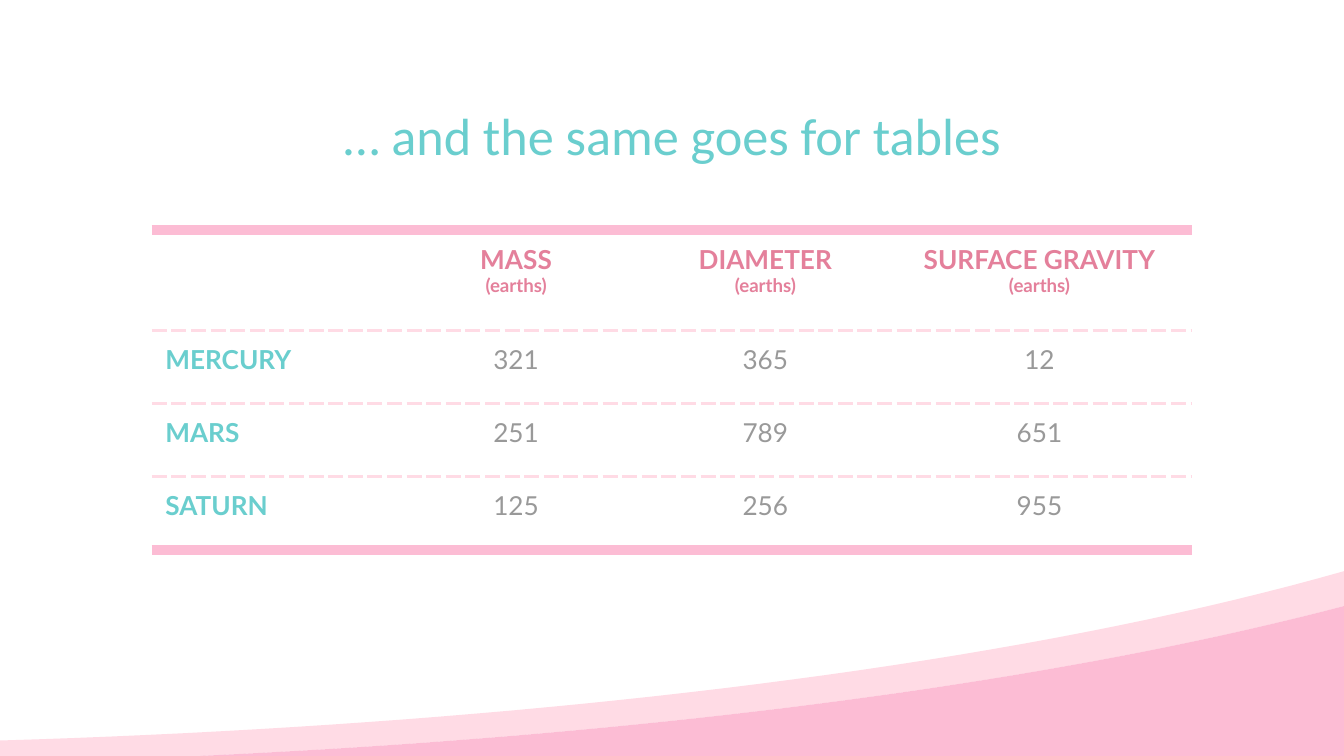
from lxml.etree import SubElement
from pptx import Presentation
from pptx.dml.color import RGBColor
from pptx.enum.text import PP_ALIGN
from pptx.oxml.ns import qn
from pptx.util import Inches, Pt

COLORS = {
    "teal": "6ACECE",
    "rose": "E4809B",
    "gray": "999999",
    "pink": "FCBCD4",
    "pale": "FFDBE5",
}
WIDTH = 10
HEIGHT = WIDTH * 9 / 16
TITLE = "… and the same goes for tables"
HEADERS = ["MASS", "DIAMETER", "SURFACE GRAVITY"]
UNIT = "(earths)"
PLANETS = [
    ("MERCURY", 321, 365, 12),
    ("MARS", 251, 789, 651),
    ("SATURN", 125, 256, 955),
]
COLUMN_WIDTHS = [1.76, 1.9, 1.81, 2.27]
TABLE_HEIGHT = 2.38
HEADER_HEIGHT = 0.75
MARGIN = Inches(0.1)
THICK = ("pink", 6, "solid")
DASHED = ("pale", 1.5, "dash")
UPPER_CURVE = [(0, 5.51), (3.68, 5.4), (7.37, 5), (WIDTH, 4.25)]
LOWER_CURVE = [(1.49, HEIGHT), (4.63, 5.48), (7.68, 5.12), (WIDTH, 4.51)]
CURVE_STEPS = 40


def write_text(holder, lines, sizes, color, font="Lato", bold=False,
               align=PP_ALIGN.CENTER):
    holder.margin_left = holder.margin_right = MARGIN
    holder.margin_top = holder.margin_bottom = MARGIN
    frame = getattr(holder, "text_frame", holder)
    frame.word_wrap = True
    for index, (line, size) in enumerate(zip(lines, sizes)):
        paragraph = frame.paragraphs[0] if index == 0 else frame.add_paragraph()
        paragraph.alignment = align
        run = paragraph.add_run()
        run.text = line
        run.font.name = font
        run.font.size = Pt(size)
        run.font.bold = bold
        run.font.color.rgb = RGBColor.from_string(COLORS[color])


def curve_points(controls):
    points = []
    for step in range(CURVE_STEPS + 1):
        t = step / CURVE_STEPS
        weights = [(1 - t) ** 3, 3 * t * (1 - t) ** 2, 3 * t ** 2 * (1 - t), t ** 3]
        points.append(tuple(
            sum(weight * control[axis] for weight, control in zip(weights, controls))
            for axis in (0, 1)))
    return points


def add_wave(slide, points, color):
    corners = [(Inches(x), Inches(y)) for x, y in points]
    builder = slide.shapes.build_freeform(*corners[0])
    builder.add_line_segments(corners[1:], close=True)
    shape = builder.convert_to_shape()
    shape.shadow.inherit = False
    shape.fill.solid()
    shape.fill.fore_color.rgb = RGBColor.from_string(COLORS[color])
    shape.line.fill.background()


def set_borders(cell, top, bottom):
    cell.fill.background()
    properties = cell._tc.get_or_add_tcPr()
    edges = [("a:lnL", None), ("a:lnR", None), ("a:lnT", top), ("a:lnB", bottom)]
    for position, (tag, style) in enumerate(edges):
        line = SubElement(properties, qn(tag))
        properties.insert(position, line)
        if style is None:
            SubElement(line, qn("a:noFill"))
            continue
        color, width, dash = style
        line.set("w", str(Pt(width)))
        fill = SubElement(line, qn("a:solidFill"))
        SubElement(fill, qn("a:srgbClr")).set("val", COLORS[color])
        SubElement(line, qn("a:prstDash")).set("val", dash)


def add_planet_table(slide):
    last = len(PLANETS)
    planet_height = (TABLE_HEIGHT - HEADER_HEIGHT) / last
    table = slide.shapes.add_table(
        last + 1, len(COLUMN_WIDTHS), Inches(1.13), Inches(1.71),
        Inches(sum(COLUMN_WIDTHS)), Inches(TABLE_HEIGHT)).table
    table.first_row = table.horz_banding = False
    for column, width in zip(table.columns, COLUMN_WIDTHS):
        column.width = Inches(width)

    for row_index, row in enumerate(table.rows):
        row.height = Inches(planet_height if row_index else HEADER_HEIGHT)
        for cell in row.cells:
            set_borders(cell, DASHED if row_index else THICK,
                        THICK if row_index == last else DASHED)

    for column, header in enumerate(HEADERS, 1):
        write_text(table.cell(0, column), [header, UNIT], [14, 10], "rose", bold=True)
    for row_index, (name, *values) in enumerate(PLANETS, 1):
        write_text(table.cell(row_index, 0), [name], [14], "teal",
                   bold=True, align=PP_ALIGN.LEFT)
        for column, value in enumerate(values, 1):
            write_text(table.cell(row_index, column), [str(value)], [14], "gray")


def main():
    presentation = Presentation()
    presentation.slide_width = Inches(WIDTH)
    presentation.slide_height = Inches(HEIGHT)
    slide = presentation.slides.add_slide(presentation.slide_layouts[6])

    upper, lower = curve_points(UPPER_CURVE), curve_points(LOWER_CURVE)
    add_wave(slide, [(0, HEIGHT)] + upper + lower[::-1], "pale")
    add_wave(slide, lower + [(WIDTH, HEIGHT)], "pink")

    title = slide.shapes.add_textbox(
        Inches(0.34), Inches(0.67), Inches(9.32), Inches(0.63))
    write_text(title.text_frame, [TITLE], [28], "teal", font="Calibri")
    add_planet_table(slide)
    presentation.save("out.pptx")


if __name__ == "__main__":
    main()
